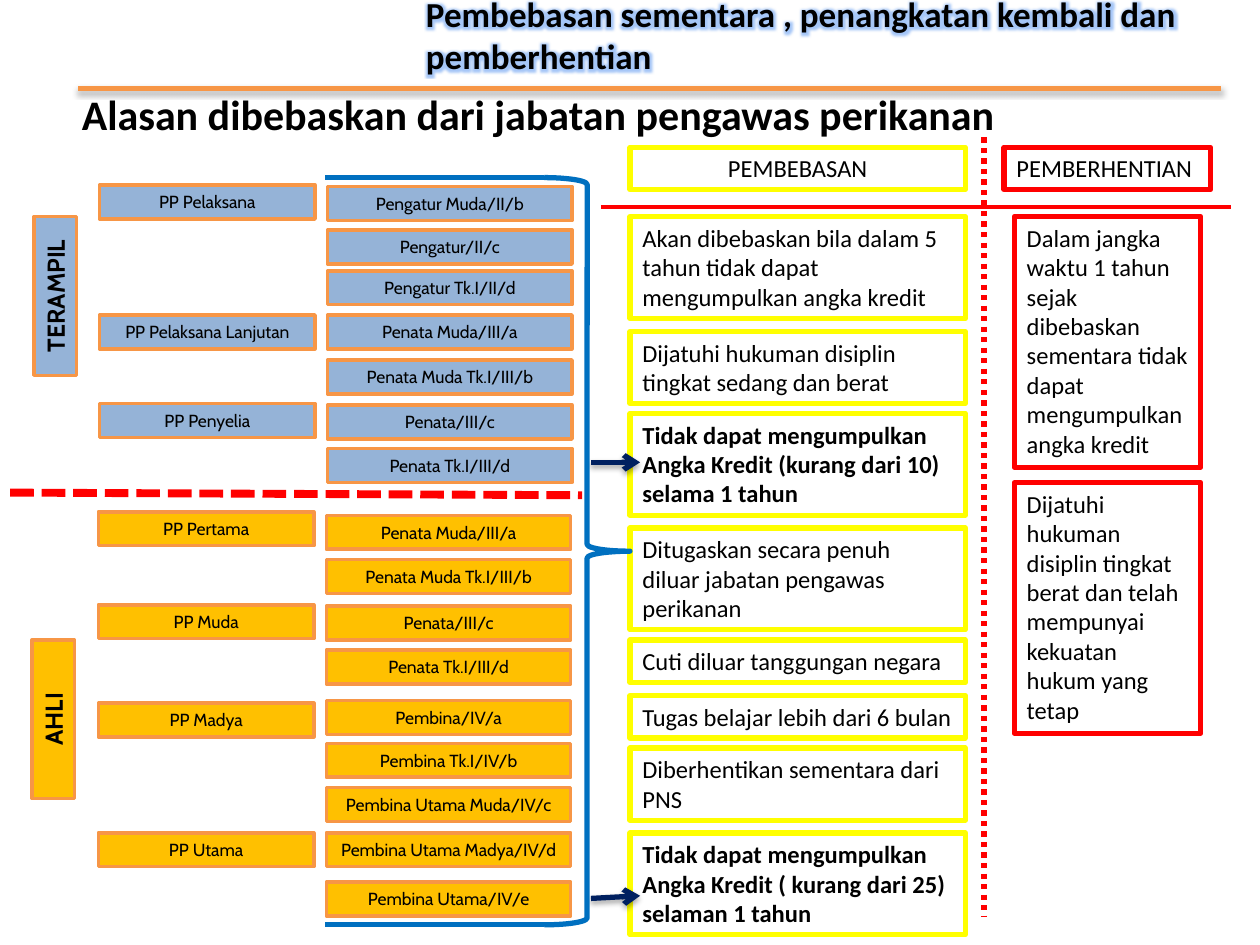
from dataclasses import dataclass

from lxml import etree
from pptx import Presentation
from pptx.dml.color import RGBColor
from pptx.enum.dml import MSO_LINE
from pptx.enum.shapes import MSO_CONNECTOR, MSO_SHAPE
from pptx.enum.text import MSO_ANCHOR, MSO_AUTO_SIZE, PP_ALIGN
from pptx.oxml.ns import qn
from pptx.util import Pt

RECTANGLE, RIGHT_BRACE = MSO_SHAPE.RECTANGLE, MSO_SHAPE.RIGHT_BRACE
STRAIGHT = MSO_CONNECTOR.STRAIGHT
DASH, DOT = MSO_LINE.SQUARE_DOT, MSO_LINE.ROUND_DOT
LEFT, CENTER = PP_ALIGN.LEFT, PP_ALIGN.CENTER
TOP, MIDDLE = MSO_ANCHOR.TOP, MSO_ANCHOR.MIDDLE
FIT_SHAPE, NO_FIT = MSO_AUTO_SIZE.SHAPE_TO_FIT_TEXT, MSO_AUTO_SIZE.NONE


@dataclass(frozen=True)
class Theme:
    text: str = "000000"
    white: str = "FFFFFF"
    blue: str = "95B3D7"
    gold: str = "FFC000"
    orange: str = "F79646"
    yellow: str = "FFFF00"
    red: str = "FF0000"
    brace: str = "0070C0"
    arrow: str = "002060"
    glow: str = "8FB8F5"
    body_font: str = "Calibri"
    rank_font: str = "Cabin"
    heading: int = 24
    title: int = 20
    body: int = 14
    rank: int = 10


THEME = Theme()
RANK_HEIGHT = 19.4
REASON_LEFT, REASON_WIDTH = 360, 191.6

# Each level: label, label left and top, fill, column shift, positions and ranks with their tops
LEVELS = [
    ("TERAMPIL", -13.7, 157, THEME.blue, 0.7,
     [("PP Pelaksana", 105.8), ("PP Pelaksana Lanjutan", 180), ("PP Penyelia", 230.6)],
     [("Pengatur Muda/II/b", 106.6), ("Pengatur/II/c", 131.5), ("Pengatur Tk.I/II/d", 154.8),
      ("Penata Muda/III/a", 180), ("Penata Muda Tk.I/III/b", 205.7), ("Penata/III/c", 231.5),
      ("Penata Tk.I/III/d", 256.3)]),
    ("AHLI", -14.9, 398.9, THEME.gold, 0,
     [("PP Pertama", 292.5), ("PP Muda", 345.6), ("PP Madya", 401.8), ("PP Utama", 475.9)],
     [("Penata Muda/III/a", 294.5), ("Penata Muda Tk.I/III/b", 319.7), ("Penata/III/c", 346.3),
      ("Penata Tk.I/III/d", 371.5), ("Pembina/IV/a", 400.3), ("Pembina Tk.I/IV/b", 424.8),
      ("Pembina Utama Muda/IV/c", 450), ("Pembina Utama Madya/IV/d", 475.9),
      ("Pembina Utama/IV/e", 504)]),
]

# Text, top, number of lines, bold
RELEASE_REASONS = [
    ("Akan dibebaskan bila dalam 5 tahun tidak dapat mengumpulkan angka kredit", 123.8, 3, False),
    ("Dijatuhi hukuman disiplin tingkat sedang dan berat", 189.4, 2, False),
    ("Tidak dapat mengumpulkan Angka Kredit (kurang dari 10) selama 1 tahun", 236.2, 3, True),
    ("Ditugaskan secara penuh diluar jabatan pengawas perikanan", 301.7, 3, False),
    ("Cuti diluar tanggungan negara", 365.8, 1, False),
    ("Tugas belajar lebih dari 6 bulan", 397.5, 1, False),
    ("Diberhentikan sementara dari PNS", 427.5, 2, False),
    ("Tidak dapat mengumpulkan Angka Kredit ( kurang dari 25) selaman 1 tahun", 476, 3, True),
]
DISMISSAL_REASONS = [
    ("Dalam jangka waktu 1 tahun sejak dibebaskan sementara tidak dapat "
     "mengumpulkan angka kredit", 123.8, 8),
    ("Dijatuhi hukuman disiplin tingkat berat dan telah mempunyai kekuatan hukum "
     "yang tetap", 275.8, 8),
]


def apply(target, **values):
    for name, value in values.items():
        setattr(target, name, value)


def box_height(lines):
    return 17 * lines + 7.2


def write(shape, text, size, font=THEME.body_font, bold=False, align=LEFT,
          anchor=TOP, fit=FIT_SHAPE, after=0):
    frame = shape.text_frame
    apply(frame, text=text, word_wrap=True, auto_size=fit, vertical_anchor=anchor)
    paragraph = frame.paragraphs[0]
    apply(paragraph, alignment=align, space_before=Pt(0), space_after=Pt(after))
    run = paragraph.runs[0]
    apply(run.font, size=Pt(size), name=font, bold=bold)
    run.font.color.rgb = RGBColor.from_string(THEME.text)
    return run


def add_effect(parent, kind=None, color=None, opacity=100, **attributes):
    """Append an effect list, empty unless a kind of effect is named."""
    effects = etree.SubElement(parent, qn("a:effectLst"))
    if kind:
        effect = etree.SubElement(effects, qn(kind), attributes)
        rgb = etree.SubElement(effect, qn("a:srgbClr"), val=color)
        etree.SubElement(rgb, qn("a:alpha"), val=str(opacity * 1000))
    return effects


def style_line(line, color, width):
    line.color.rgb = RGBColor.from_string(color)
    line.width = Pt(width)


def add_box(slide, text, bounds, fill, border, width, size=THEME.body, rotation=0, **style):
    shape = slide.shapes.add_shape(RECTANGLE, *map(Pt, bounds))
    apply(shape, rotation=rotation)
    shape.shadow.inherit = False
    if fill:
        shape.fill.solid()
        shape.fill.fore_color.rgb = RGBColor.from_string(fill)
    else:
        shape.fill.background()
    style_line(shape.line, border, width)
    write(shape, text, size, **style)


def add_line(shapes, points, color, width=3, dash=None, arrow=False, shadow=False):
    line = shapes.add_connector(STRAIGHT, *map(Pt, points))
    style_line(line.line, color, width)
    if dash:
        line.line.dash_style = dash
    if arrow:
        etree.SubElement(line.line._get_or_add_ln(), qn("a:tailEnd"), type="arrow")
    properties = line._element.spPr
    if shadow:
        add_effect(properties, "a:outerShdw", THEME.text, 35, blurRad="40000",
                   dist="23000", dir="5400000", rotWithShape="0")
    else:
        add_effect(properties)


def add_headings(slide):
    title, heading = slide.placeholders
    for placeholder, bounds, text, size in (
        (title, (236.2, -22.3, 478, 84.2),
         "Pembebasan sementara , penangkatan kembali dan pemberhentian", THEME.title),
        (heading, (39.6, 39.6, 658, 50.4),
         "Alasan dibebaskan dari jabatan pengawas perikanan", THEME.heading),
    ):
        apply(placeholder, **dict(zip(("left", "top", "width", "height"), map(Pt, bounds))))
        run = write(placeholder, text, size, bold=True, anchor=MIDDLE, fit=NO_FIT, after=6)
        if placeholder is title:
            properties = run.font._element
            effects = add_effect(properties, "a:glow", THEME.glow, 80, rad="63500")
            properties.find(qn("a:solidFill")).addnext(effects)
    # The heading is a plain line without a bullet
    paragraph = heading.text_frame.paragraphs[0]._p.get_or_add_pPr()
    apply_indent = {"marL": "0", "indent": "0"}
    for name, value in apply_indent.items():
        paragraph.set(name, value)
    etree.SubElement(paragraph, qn("a:buNone"))


def add_level(slide, label, left, top, fill, shift, positions, ranks):
    style = dict(fill=fill, border=THEME.orange, width=2, font=THEME.rank_font, align=CENTER)
    add_box(slide, label, (left, top, 90.7, 24.2), rotation=270, bold=True, **style)
    for column, width, entries in ((56.2, 123.1, positions), (186.5, 139.7, ranks)):
        for text, entry_top in entries:
            add_box(slide, text, (column + shift, entry_top, width, RANK_HEIGHT),
                    size=THEME.rank, **style)


def add_brace(slide):
    group = slide.shapes.add_group_shape()
    left, top, height = 311, 101.5, 427
    brace = group.shapes.add_shape(RIGHT_BRACE, Pt(left), Pt(top), Pt(49), Pt(height))
    brace.adjustments[0], brace.adjustments[1] = 0.08, 0.5
    brace.shadow.inherit = False
    brace.fill.background()
    style_line(brace.line, THEME.brace, 3)
    for y in (top, top + height):
        add_line(group.shapes, (185.8, y, left, y), THEME.brace)


def main():
    presentation = Presentation()
    apply(presentation, slide_width=Pt(720), slide_height=Pt(540))
    slide = presentation.slides.add_slide(presentation.slide_layouts[1])
    shapes = slide.shapes

    # Headings and rule
    add_line(shapes, (44.6, 50.4, 697.7, 50.4), THEME.orange, shadow=True)
    add_headings(slide)

    # Levels with their positions and ranks
    for level in LEVELS:
        add_level(slide, *level)
    add_line(shapes, (5.8, 281.5, 332.6, 283), THEME.red, 4.5, DASH)

    # Reasons for release
    release = dict(fill=THEME.white, border=THEME.yellow, width=3)
    add_box(slide, "PEMBEBASAN", (REASON_LEFT, 84.2, REASON_WIDTH, box_height(1)),
            align=CENTER, **release)
    for text, top, lines, bold in RELEASE_REASONS:
        add_box(slide, text, (REASON_LEFT, top, REASON_WIDTH, box_height(lines)),
                bold=bold, **release)
    for start, end in ((264.2, 264.2), (513.4, 511.9)):
        add_line(shapes, (337.7, start, 365.8, end), THEME.arrow, arrow=True, shadow=True)
    add_brace(slide)

    # Reasons for dismissal
    dismissal = dict(fill=None, border=THEME.red, width=3)
    add_box(slide, "PEMBERHENTIAN", (573.8, 84.2, 118.1, box_height(1)), **dismissal)
    for text, top, lines in DISMISSAL_REASONS:
        add_box(slide, text, (579.6, top, 106.6, box_height(lines)), **dismissal)

    # Dividers
    add_line(shapes, (562.3, 78.5, 562.3, 523.4), THEME.red, dash=DOT)
    add_line(shapes, (343.4, 118.1, 703.4, 118.1), THEME.red, 2.25)

    presentation.save("out.pptx")


if __name__ == "__main__":
    main()
